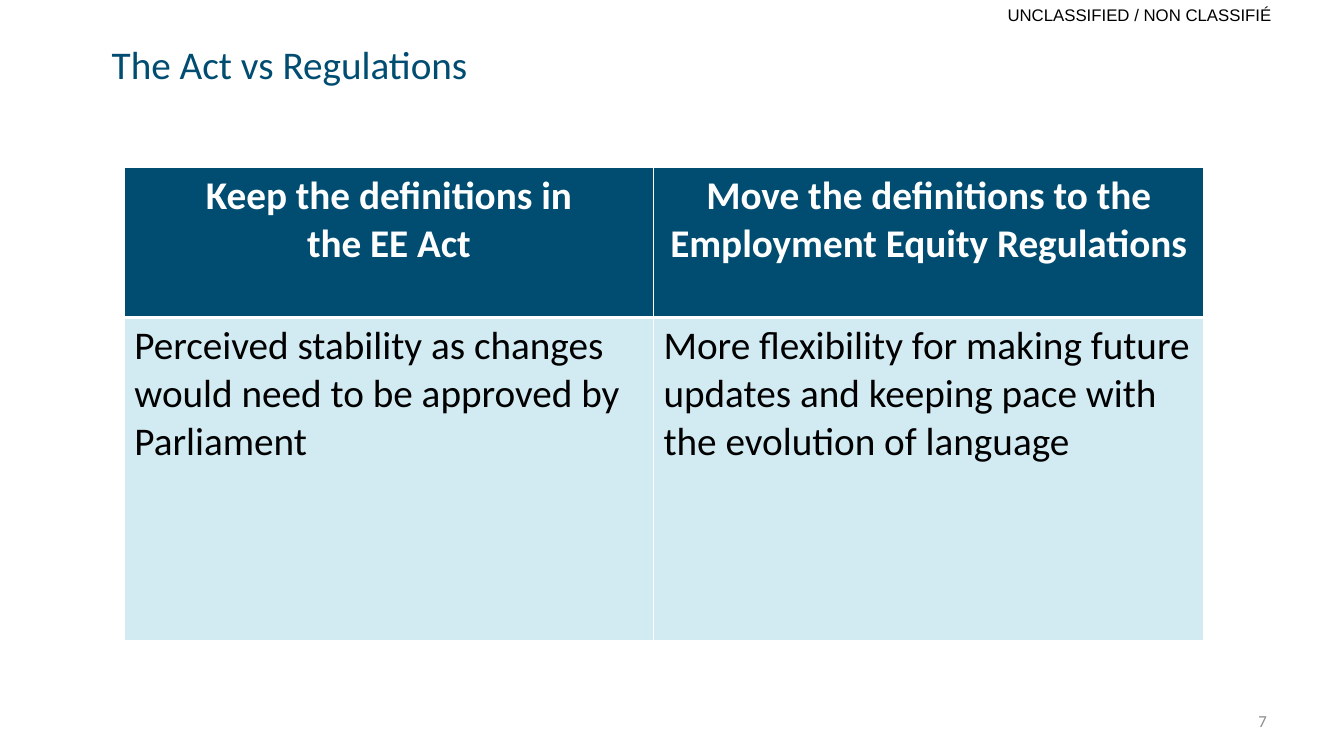
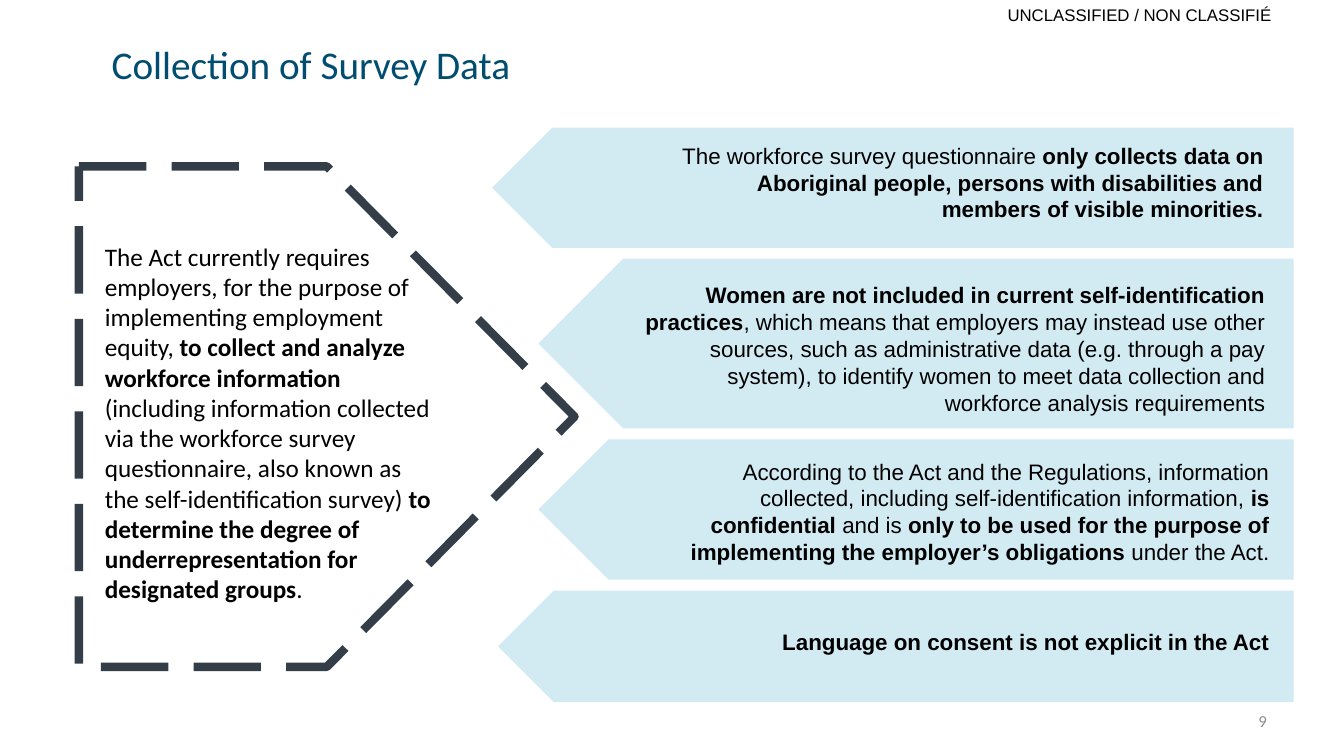
from dataclasses import dataclass

from lxml.etree import SubElement
from pptx import Presentation
from pptx.dml.color import RGBColor
from pptx.enum.dml import MSO_LINE
from pptx.enum.shapes import MSO_SHAPE as Preset
from pptx.enum.text import MSO_ANCHOR as Anchor, PP_ALIGN as Align
from pptx.oxml.ns import qn
from pptx.util import Inches, Pt


@dataclass(frozen=True)
class Theme:
    title: str = "004D71"
    pale: str = "D2EBF3"
    outline: str = "333E48"
    number: str = "8C8C8C"
    black: str = "000000"
    white: str = "FFFFFF"
    heading_font: str = "Calibri"
    label_font: str = "Arial"
    large: int = 28
    body: int = 18
    band: int = 16
    small: int = 12


@dataclass(frozen=True)
class Band:
    left: float
    height: float
    text_left: float
    text_right: float
    text_offset: float
    text: str


THEME = Theme()
COLUMNS, ROWS = 16, 9
WIDTH, HEIGHT = Inches(13.33), Inches(7.5)
BAND_TOP, BAND_RIGHT, BAND_GAP = 1.52, 15.4, 0.13

TABLE_COLUMNS = (6.3, 6.55)
TABLE_ROWS = (1.79, 3.85)
TABLE_TEXT = (
    ("Keep the definitions in\nthe EE Act",
     "Move the definitions to the Employment Equity Regulations"),
    ("Perceived stability as changes would need to be approved by Parliament",
     "More flexibility for making future updates and keeping pace with "
     "the evolution of language"),
)

REQUIREMENT = (
    "The Act currently requires employers, for the purpose of implementing "
    "employment equity, *to collect and analyze workforce information *"
    "(including information collected via the workforce survey questionnaire, "
    "also known as the self-identification survey) *to determine the degree of "
    "underrepresentation for designated groups*."
)

BANDS = (
    Band(5.86, 1.43, 8, 15.16, 0.11,
         "The workforce survey questionnaire *only collects data on Aboriginal "
         "people, persons with disabilities and members of visible minorities.*"),
    Band(6.41, 2.02, 7.34, 15.18, 0.21,
         "*Women are not included in current self-identification practices*, "
         "which means that employers may instead use other sources, such as "
         "administrative data (e.g. through a pay system), to identify women to "
         "meet data collection and workforce analysis requirements"),
    Band(6.41, 1.67, 8, 15.23, 0.16,
         "According to the Act and the Regulations, information collected, "
         "including self-identification information, *is confidential *and is "
         "*only to be used for the purpose of implementing the employer’s "
         "obligations* under the Act."),
    Band(5.93, 1.33, 8, 15.23, 0.39,
         "*Language on consent is not explicit in the Act*"),
)


def across(columns):
    return round(WIDTH * columns / COLUMNS)


def down(rows):
    return round(HEIGHT * rows / ROWS)


def place(left, top, width, height):
    return across(left), down(top), across(width), down(height)


def color(value):
    return RGBColor.from_string(value)


def write(frame, text, *, size, font=THEME.heading_font, fill=THEME.black,
          align=Align.LEFT, bold=False):
    frame.word_wrap = True
    for index, line in enumerate(text.split("\n")):
        paragraph = frame.add_paragraph() if index else frame.paragraphs[0]
        paragraph.alignment = align
        for position, part in enumerate(line.split("*")):
            if part:
                run = paragraph.add_run()
                run.text = part
                run.font.size = Pt(size)
                run.font.name = font
                run.font.bold = bold or position % 2 == 1
                run.font.color.rgb = color(fill)


def add_text(slide, box, text, *, anchor=Anchor.TOP, inset=True, **style):
    frame = slide.shapes.add_textbox(*place(*box)).text_frame
    frame.vertical_anchor = anchor
    if not inset:
        frame.margin_left = frame.margin_right = 0
        frame.margin_top = frame.margin_bottom = 0
    write(frame, text, **style)


def add_pentagon(slide, box, *, fill=None, line=None, flip=False):
    shape = slide.shapes.add_shape(Preset.PENTAGON, *place(*box))
    shape.shadow.inherit = False
    if fill:
        shape.fill.solid()
        shape.fill.fore_color.rgb = color(fill)
    else:
        shape.fill.background()
    if line:
        shape.line.color.rgb = color(line)
        shape.line.width = Pt(6)
        shape.line.dash_style = MSO_LINE.LONG_DASH
    else:
        shape.line.fill.background()
    if flip:
        shape._element.spPr.find(qn("a:xfrm")).set("flipH", "1")


def set_borders(cell, **widths):
    properties = cell._tc.get_or_add_tcPr()
    for index, side in enumerate("LRTB"):
        border = properties.makeelement(
            qn(f"a:ln{side}"), {"w": str(Pt(widths.get(side, 1)))})
        solid = SubElement(border, qn("a:solidFill"))
        SubElement(solid, qn("a:srgbClr"), val=THEME.white)
        properties.insert(index, border)


def add_comparison(slide, left, top):
    box = place(left, top, sum(TABLE_COLUMNS), sum(TABLE_ROWS))
    table = slide.shapes.add_table(len(TABLE_ROWS), len(TABLE_COLUMNS), *box).table
    table.horz_banding = False
    for column, width in zip(table.columns, TABLE_COLUMNS):
        column.width = across(width)
    for row, height in zip(table.rows, TABLE_ROWS):
        row.height = down(height)
    for row_index, texts in enumerate(TABLE_TEXT):
        header = row_index == 0
        for column_index, text in enumerate(texts):
            cell = table.cell(row_index, column_index)
            cell.fill.solid()
            cell.fill.fore_color.rgb = color(THEME.title if header else THEME.pale)
            set_borders(cell, **{"B" if header else "T": 3})
            write(cell.text_frame, text, size=THEME.large, bold=header,
                  fill=THEME.white if header else THEME.black,
                  align=Align.CENTER if header else Align.LEFT)


def add_bands(slide):
    top = BAND_TOP
    for band in BANDS:
        add_pentagon(slide, (band.left, top, BAND_RIGHT - band.left, band.height),
                     fill=THEME.pale, flip=True)
        add_text(slide, (band.text_left, top + band.text_offset,
                         band.text_right - band.text_left,
                         band.height - band.text_offset),
                 band.text, size=THEME.band, font=THEME.label_font,
                 align=Align.RIGHT)
        top += band.height + BAND_GAP


def add_slide(presentation, title, number):
    slide = presentation.slides.add_slide(presentation.slide_layouts[6])
    add_text(slide, (11.16, 0.06, 3.98, 0.24), "UNCLASSIFIED / NON CLASSIFIÉ",
             size=THEME.small, font=THEME.label_font, align=Align.RIGHT,
             anchor=Anchor.MIDDLE, inset=False)
    add_text(slide, (11.47, 8.34, 3.73, 0.48), str(number), size=THEME.small,
             fill=THEME.number, align=Align.RIGHT, anchor=Anchor.MIDDLE)
    add_text(slide, (1.33, 0.18, 9.5, 1.15), title, size=THEME.large,
             fill=THEME.title, anchor=Anchor.MIDDLE, inset=False)
    return slide


def main():
    presentation = Presentation()
    presentation.slide_width, presentation.slide_height = WIDTH, HEIGHT

    comparison = add_slide(presentation, "The Act vs Regulations", 7)
    add_comparison(comparison, 1.48, 1.99)

    survey = add_slide(presentation, "Collection of Survey Data", 9)
    add_pentagon(survey, (0.94, 1.98, 5.9, 5.96), line=THEME.outline)
    add_text(survey, (1.13, 2.81, 4.19, 4.49), REQUIREMENT, size=THEME.body)
    add_bands(survey)

    presentation.save("out.pptx")


if __name__ == "__main__":
    main()
